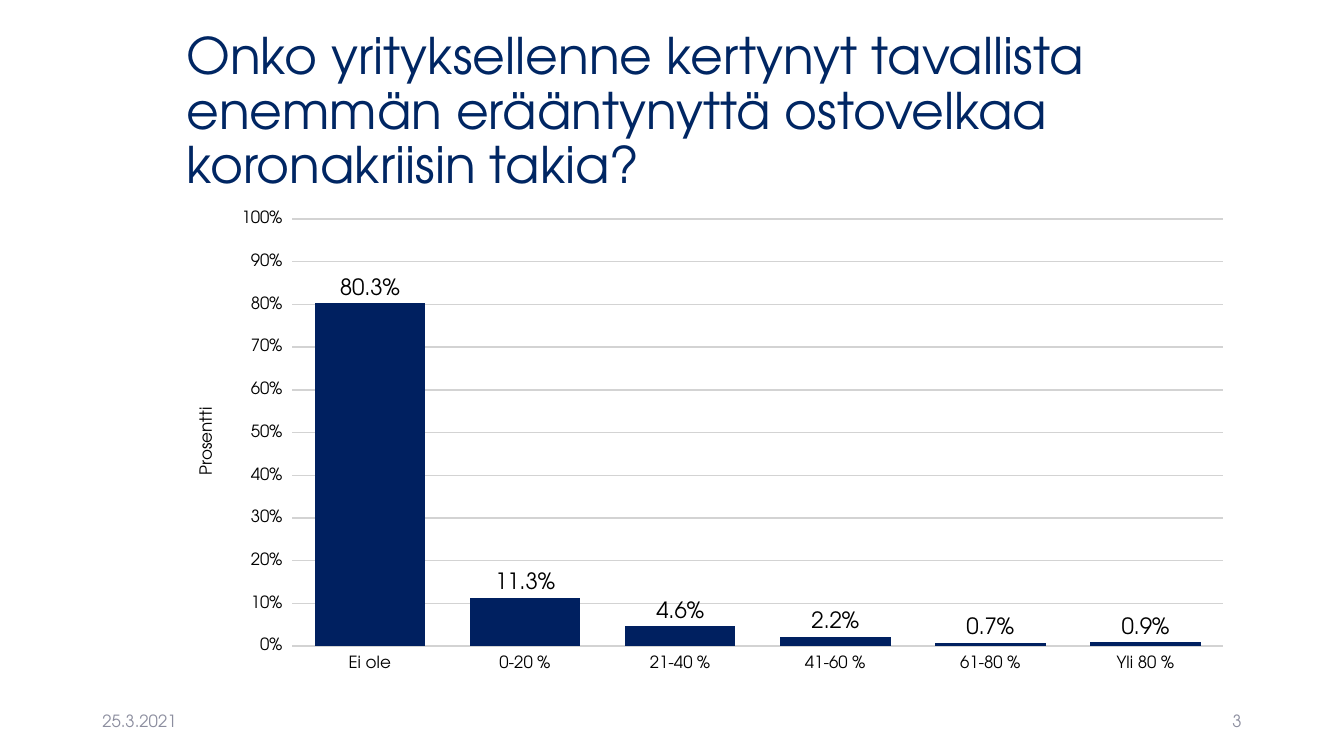
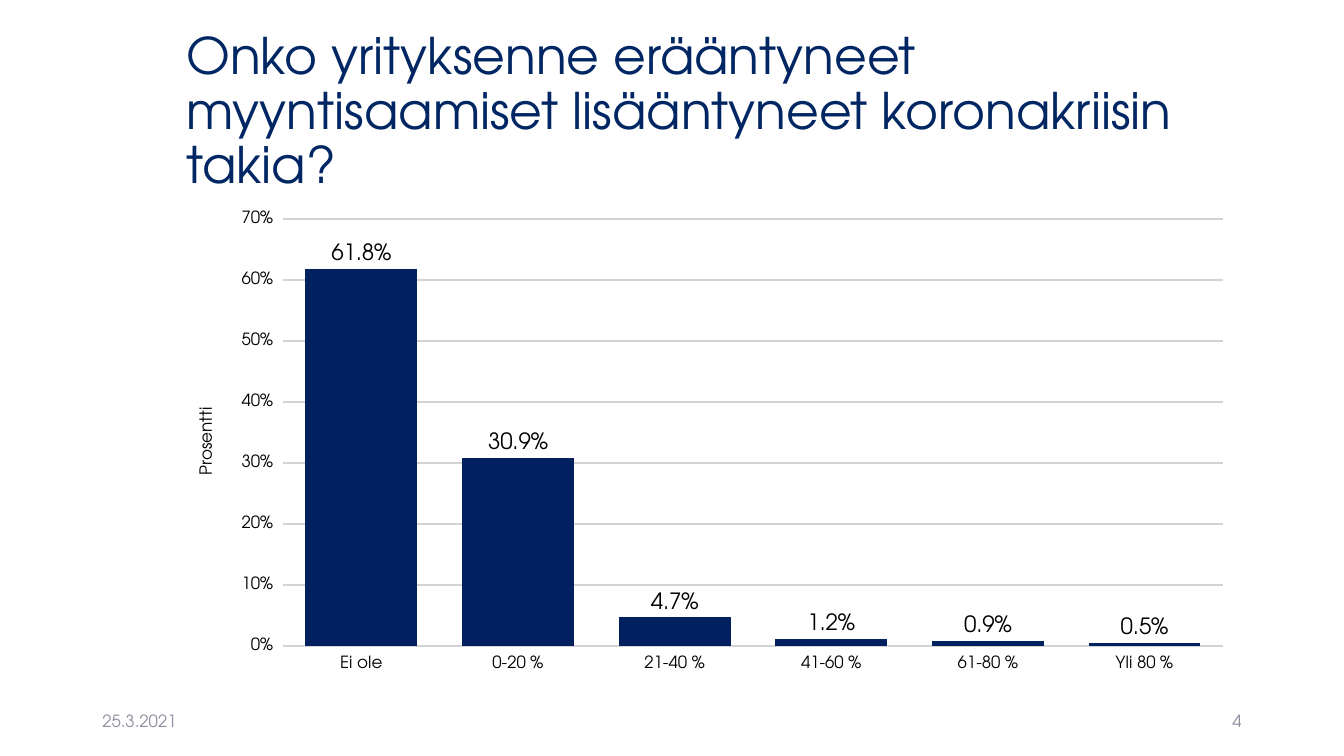
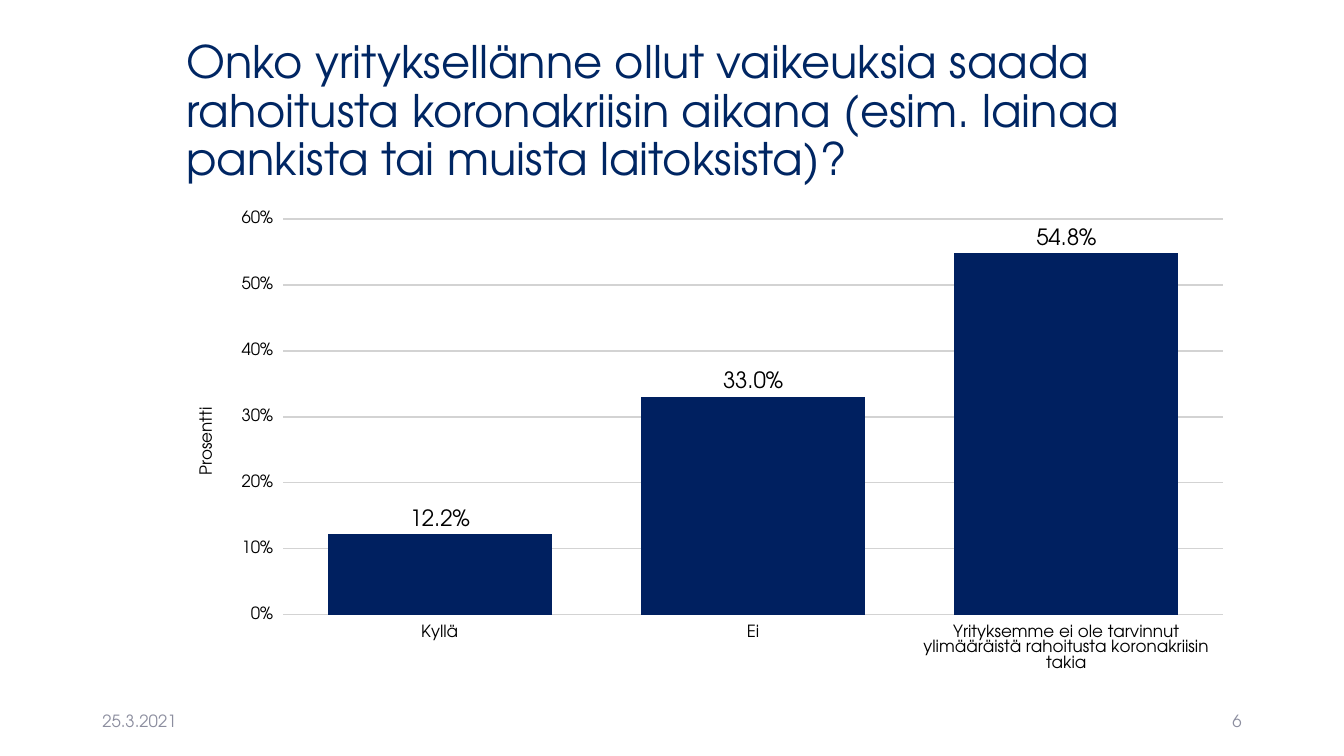
"""Build three survey slides, each with a question, a column chart and a footer."""
from dataclasses import dataclass

from pptx import Presentation
from pptx.chart.axis import ValueAxis
from pptx.chart.chart import Chart
from pptx.chart.data import CategoryChartData as ChartData
from pptx.dml.color import RGBColor
from pptx.enum.chart import XL_CHART_TYPE as ChartType
from pptx.enum.chart import XL_LABEL_POSITION as LabelPosition
from pptx.enum.chart import XL_TICK_MARK as TickMark
from pptx.enum.text import MSO_ANCHOR as Anchor
from pptx.enum.text import PP_ALIGN as Align
from pptx.oxml import parse_xml
from pptx.oxml.ns import nsdecls
from pptx.slide import Slide
from pptx.text.text import Font
from pptx.util import Emu, Pt


@dataclass(frozen=True)
class Theme:
    font: str = "TeX Gyre Adventor"
    title: str = "002663"
    bar: str = "002060"
    text: str = "000000"
    grid: str = "D3D3D3"
    footer: str = "8C8E9F"
    plot: str = "FFFFFF"
    small_size: int = 12
    chart_size: int = 11
    label_size: int = 16


@dataclass(frozen=True)
class Area:
    left: int
    top: int
    width: int
    height: int

    def emu(self) -> tuple[Emu, Emu, Emu, Emu]:
        return px(self.left), px(self.top), px(self.width), px(self.height)


@dataclass(frozen=True)
class TextStyle:
    size: int
    color: str
    align: Align = Align.LEFT
    line_spacing: float = 1.0


@dataclass(frozen=True)
class Question:
    number: int
    title: str
    title_size: int
    answers: tuple[str, ...]
    shares: tuple[float, ...]
    axis_maximum: float


THEME = Theme()
EMU_PER_PX = 9525
TITLE_AREA = Area(168, 38, 1017, 139)
CHART_AREA = Area(168, 192, 1017, 457)
DATE_AREA = Area(88, 667, 288, 38)
NUMBER_AREA = Area(904, 667, 288, 38)
DATE = "25.3.2021"
RANGES = ("Ei ole", "0-20 %", "21-40 %", "41-60 %", "61-80 %", "Yli 80 %")
QUESTIONS = (
    Question(
        3,
        "Onko yrityksellenne kertynyt tavallista enemmän erääntynyttä ostovelkaa koronakriisin takia?",
        36, RANGES, (0.803, 0.113, 0.046, 0.022, 0.007, 0.009), 1.0,
    ),
    Question(
        4,
        "Onko yrityksenne erääntyneet myyntisaamiset lisääntyneet koronakriisin takia?",
        36, RANGES, (0.618, 0.309, 0.047, 0.012, 0.009, 0.005), 0.7,
    ),
    Question(
        6,
        "Onko yrityksellänne ollut vaikeuksia saada rahoitusta koronakriisin aikana "
        "(esim. lainaa pankista tai muista laitoksista)?",
        32,
        ("Kyllä", "Ei", "Yrityksemme ei ole tarvinnut ylimääräistä rahoitusta koronakriisin takia"),
        (0.122, 0.33, 0.548), 0.6,
    ),
)


def px(length: int) -> Emu:
    return Emu(length * EMU_PER_PX)


def set_font(font: Font, size: int, color: str) -> None:
    font.name = THEME.font
    font.size = Pt(size)
    font.bold = False
    font.color.rgb = RGBColor.from_string(color)


def add_text(page: Slide, area: Area, text: str, style: TextStyle) -> None:
    box = page.shapes.add_textbox(*area.emu())
    frame = box.text_frame
    frame.word_wrap = True
    frame.vertical_anchor = Anchor.MIDDLE
    para = frame.paragraphs[0]
    para.alignment = style.align
    para.line_spacing = style.line_spacing
    span = para.add_run()
    span.text = text
    set_font(span.font, style.size, style.color)


def style_value_axis(axis: ValueAxis, maximum: float) -> None:
    axis.minimum_scale = 0
    axis.maximum_scale = maximum
    axis.major_unit = 0.1
    axis.tick_labels.number_format = "0%"
    axis.tick_labels.number_format_is_linked = False
    axis.has_major_gridlines = True
    grid = axis.major_gridlines.format.line
    grid.color.rgb = RGBColor.from_string(THEME.grid)
    grid.width = Pt(1)
    span = axis.axis_title.text_frame.paragraphs[0].add_run()
    span.text = "Prosentti"
    set_font(span.font, THEME.small_size, THEME.text)


def style_columns(chart: Chart) -> None:
    plot = chart.plots[0]
    plot.gap_width = 40
    plot.vary_by_categories = False
    columns = plot.series[0]
    columns.format.fill.solid()
    columns.format.fill.fore_color.rgb = RGBColor.from_string(THEME.bar)
    labels = columns.data_labels
    labels.show_value = True
    labels.position = LabelPosition.OUTSIDE_END
    labels.number_format = "0.0%"
    labels.number_format_is_linked = False
    set_font(labels.font, THEME.label_size, THEME.text)


def fill_plot_area(chart: Chart) -> None:
    plot_area = chart.element.xpath("c:chart/c:plotArea")[0]
    plot_area.append(parse_xml(
        f'<c:spPr {nsdecls("c", "a")}><a:solidFill>'
        f'<a:srgbClr val="{THEME.plot}"/></a:solidFill></c:spPr>'
    ))


def add_answer_chart(page: Slide, question: Question) -> None:
    data = ChartData(number_format="0.0%")
    data.categories = question.answers
    data.add_series("Series 1", question.shares)
    chart = page.shapes.add_chart(ChartType.COLUMN_CLUSTERED, *CHART_AREA.emu(), data).chart
    chart.has_legend = False
    chart.has_title = False
    set_font(chart.font, THEME.chart_size, THEME.text)
    for axis in (chart.category_axis, chart.value_axis):
        axis.major_tick_mark = TickMark.OUTSIDE
        axis.format.line.fill.background()
        set_font(axis.tick_labels.font, THEME.small_size, THEME.text)
    style_value_axis(chart.value_axis, question.axis_maximum)
    style_columns(chart)
    fill_plot_area(chart)


def main() -> None:
    deck = Presentation()
    deck.slide_width, deck.slide_height = px(1280), px(720)
    blank = deck.slide_layouts[6]
    date_style = TextStyle(THEME.small_size, THEME.footer)
    number_style = TextStyle(THEME.small_size, THEME.footer, Align.RIGHT)
    for question in QUESTIONS:
        page = deck.slides.add_slide(blank)
        title_style = TextStyle(question.title_size, THEME.title, line_spacing=0.9)
        add_text(page, TITLE_AREA, question.title, title_style)
        add_text(page, DATE_AREA, DATE, date_style)
        add_text(page, NUMBER_AREA, str(question.number), number_style)
        add_answer_chart(page, question)
    deck.save("out.pptx")


if __name__ == "__main__":
    main()
